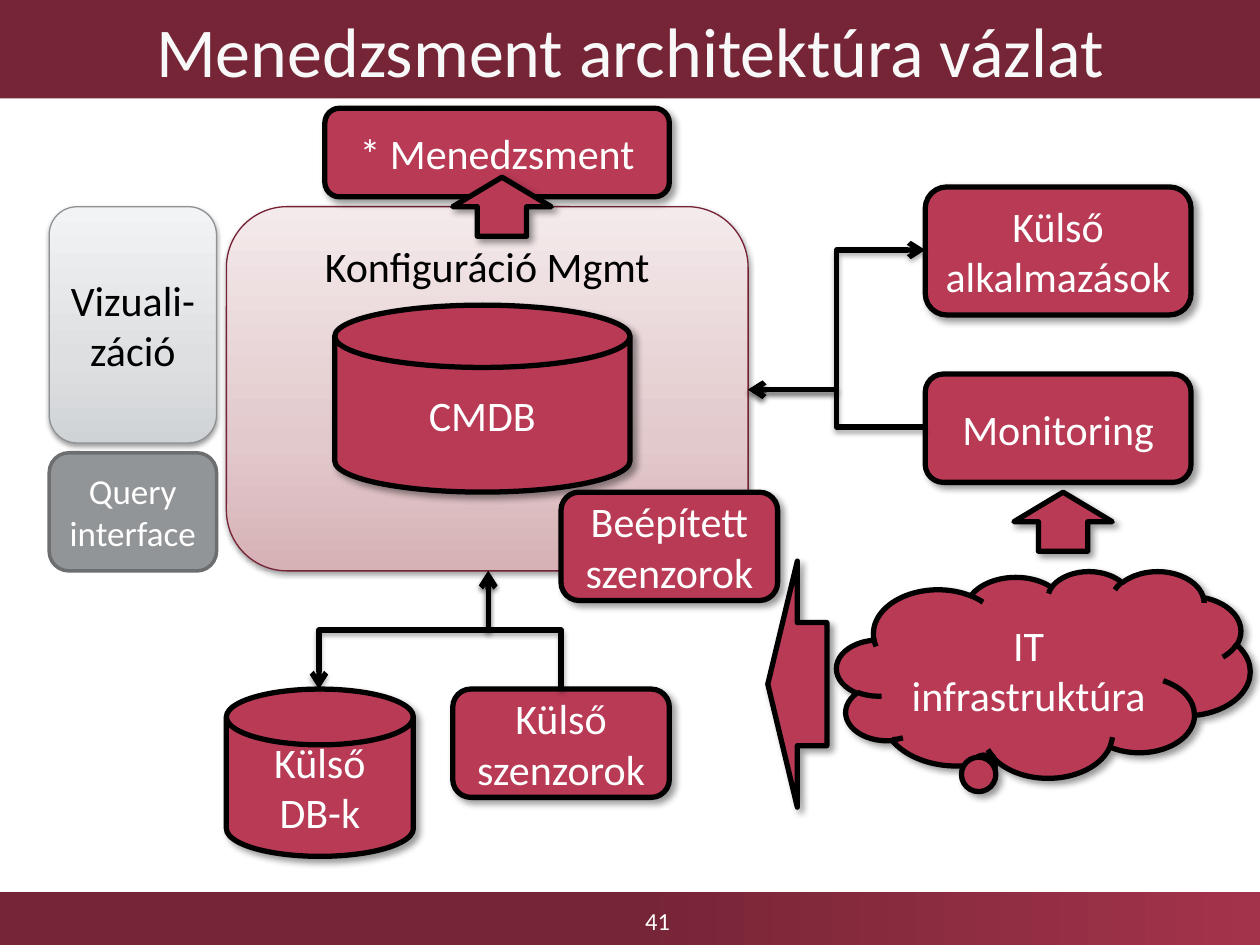
from dataclasses import dataclass
from typing import Optional

from lxml import etree
from pptx import Presentation
from pptx import util as u
from pptx.dml import color
from pptx.enum import shapes, text
from pptx.oxml import ns, parse_xml

EMU_PER_PX = 914400 / 64
FONT = "Calibri"
COLORS = {
    "bar": "762536", "bar_end": "A3334B", "title": "F8F8F8", "red": "B83A55",
    "black": "000000", "white": "FFFFFF", "gray": "929598", "gray_line": "6C6E70",
    "pink_line": "752234", "silver_line": "8F9295",
}
BAR_STOPS = ((0, "762536"), (50, "762536"), (100, "A3334B"))
PINK_STOPS = ((0, "D6B1B5"), (35, "E2C9CC"), (100, "F4EAEB"))
SILVER_STOPS = ((0, "D0D3D6"), (35, "DDDFE1"), (100, "F2F3F4"))

ROUND = shapes.MSO_SHAPE.ROUNDED_RECTANGLE
DISK = shapes.MSO_SHAPE.FLOWCHART_MAGNETIC_DISK
CLOUD = shapes.MSO_SHAPE.CLOUD_CALLOUT
UP = shapes.MSO_SHAPE.UP_ARROW
LEFT = shapes.MSO_SHAPE.LEFT_ARROW


@dataclass(frozen=True)
class Shadow:
    alpha: int
    blur: float
    dist: float
    angle: int


STRONG = Shadow(40, 4, 3, 45)
SOFT = Shadow(38, 3.1, 1.6, 90)
LINE_SHADOW = Shadow(35, 3.1, 1.8, 90)


@dataclass(frozen=True)
class Box:
    kind: shapes.MSO_SHAPE
    x: int
    y: int
    w: int
    h: int
    label: str = ""
    size: int = 24
    ink: str = "white"
    fill: str = "red"
    stops: tuple = ()
    line: str = "black"
    line_pt: float = 3
    shadow: Optional[Shadow] = STRONG
    top_margin: Optional[int] = None
    adj: tuple = ()


@dataclass(frozen=True)
class Elbow:
    start: tuple
    end: tuple
    vertical: bool = False
    both: bool = False


BOXES = [
    Box(ROUND, 115, 105, 265, 185, "Konfiguráció Mgmt", ink="black", stops=PINK_STOPS,
        line="pink_line", line_pt=0.75, shadow=SOFT, top_margin=8),
    Box(DISK, 170, 155, 150, 95, "CMDB"),
    Box(CLOUD, 425, 290, 210, 105, "IT infrastruktúra", adj=(-0.147, 0.455)),
    Box(ROUND, 285, 250, 110, 55, "Beépített\nszenzorok"),
    Box(ROUND, 230, 350, 110, 55, "Külső\nszenzorok"),
    Box(ROUND, 25, 105, 85, 120, "Vizuali-\nzáció", ink="black", stops=SILVER_STOPS,
        line="silver_line", line_pt=0.75, shadow=SOFT),
    Box(ROUND, 470, 190, 135, 55, "Monitoring"),
    Box(ROUND, 470, 95, 135, 65, "Külső\nalkalmazások"),
    Box(DISK, 115, 350, 95, 85, "Külső DB-k"),
    Box(ROUND, 165, 55, 175, 45, "* Menedzsment"),
    Box(UP, 230, 90, 50, 30),
    Box(UP, 515, 250, 50, 30),
    Box(LEFT, 390, 285, 30, 125),
    Box(ROUND, 25, 230, 85, 60, "Query interface", size=20, fill="gray",
        line="gray_line", line_pt=2, shadow=None),
]
ELBOWS = [
    Elbow((470, 217), (380, 198)),
    Elbow((470, 127), (380, 198), both=True),
    Elbow((162, 350), (248, 290), vertical=True, both=True),
    Elbow((285, 350), (248, 290), vertical=True),
]


def px(n: float) -> u.Emu:
    return u.Emu(round(n * EMU_PER_PX))


def rgb(name: str) -> color.RGBColor:
    return color.RGBColor.from_string(COLORS[name])


def set_gradient(sp, stops: tuple, angle: int) -> None:
    gs = "".join(f'<a:gs pos="{pos * 1000}"><a:srgbClr val="{value}"/></a:gs>'
                 for pos, value in stops)
    grad = parse_xml(f'<a:gradFill {ns.nsdecls("a")} rotWithShape="1"><a:gsLst>{gs}</a:gsLst>'
                     f'<a:lin ang="{angle * 60000}" scaled="0"/></a:gradFill>')
    sp._element.spPr.find(ns.qn("a:prstGeom")).addnext(grad)


def set_shadow(sp, shadow: Optional[Shadow]) -> None:
    effects = etree.SubElement(sp._element.spPr, ns.qn("a:effectLst"))
    if shadow:
        outer = etree.SubElement(
            effects, ns.qn("a:outerShdw"), blurRad=str(u.Pt(shadow.blur)),
            dist=str(u.Pt(shadow.dist)), dir=str(shadow.angle * 60000), rotWithShape="0")
        clr = etree.SubElement(outer, ns.qn("a:srgbClr"), val=COLORS["black"])
        etree.SubElement(clr, ns.qn("a:alpha"), val=str(shadow.alpha * 1000))


def write(sp, label: str, size: int, ink: str) -> None:
    tf = sp.text_frame
    tf.word_wrap = True
    tf.vertical_anchor = text.MSO_ANCHOR.MIDDLE
    p = tf.paragraphs[0]
    p.text = label
    p.alignment = text.PP_ALIGN.CENTER
    p.font.name = FONT
    p.font.size = u.Pt(size)
    p.font.color.rgb = rgb(ink)


def draw_box(s, box: Box) -> None:
    sp = s.shapes.add_shape(box.kind, px(box.x), px(box.y), px(box.w), px(box.h))
    for i, value in enumerate(box.adj):
        sp.adjustments[i] = value
    if box.stops:
        set_gradient(sp, box.stops, 270)
    else:
        sp.fill.solid()
        sp.fill.fore_color.rgb = rgb(box.fill)
    sp.line.color.rgb = rgb(box.line)
    sp.line.width = u.Pt(box.line_pt)
    set_shadow(sp, box.shadow)
    if box.label:
        write(sp, box.label, box.size, box.ink)
    if box.top_margin is not None:
        sp.text_frame.vertical_anchor = text.MSO_ANCHOR.TOP
        sp.text_frame.margin_top = px(box.top_margin)


def draw_elbow(s, elbow: Elbow) -> None:
    (x1, y1), (x2, y2) = elbow.start, elbow.end
    if elbow.vertical:
        cx, cy, dx, dy = (x1 + x2) / 2, (y1 + y2) / 2, x2 - x1, y2 - y1
        x1, y1, x2, y2 = cx + dy / 2, cy - dx / 2, cx - dy / 2, cy + dx / 2
    c = s.shapes.add_connector(shapes.MSO_CONNECTOR.ELBOW, px(x1), px(y1), px(x2), px(y2))
    c.line.color.rgb = rgb("black")
    c.line.width = u.Pt(3)
    spPr = c._element.spPr
    if elbow.vertical:
        spPr.find(ns.qn("a:xfrm")).set("rot", str(270 * 60000))
    ln = spPr.find(ns.qn("a:ln"))
    for end in ("headEnd", "tailEnd") if elbow.both else ("tailEnd",):
        etree.SubElement(ln, ns.qn(f"a:{end}"), type="arrow")
    set_shadow(c, LINE_SHADOW)


def draw_frame(s) -> None:
    title = s.shapes.title
    title.left, title.top, title.width, title.height = px(0), px(0), px(640), px(50)
    title.fill.solid()
    title.fill.fore_color.rgb = rgb("bar")
    write(title, "Menedzsment architektúra vázlat", 40, "title")
    footer = s.shapes.add_shape(shapes.MSO_SHAPE.RECTANGLE, px(0), px(453), px(640), px(27))
    set_gradient(footer, BAR_STOPS, 0)
    footer.line.fill.background()
    footer.shadow.inherit = False
    number = s.shapes.add_textbox(px(230), px(455), px(208), px(25))
    write(number, "41", 14, "white")


def main() -> None:
    prs = Presentation()
    prs.slide_width, prs.slide_height = px(640), px(480)
    s = prs.slides.add_slide(prs.slide_layouts[5])
    draw_frame(s)
    for box in BOXES:
        draw_box(s, box)
    for elbow in ELBOWS:
        draw_elbow(s, elbow)
    prs.save("out.pptx")


if __name__ == "__main__":
    main()
